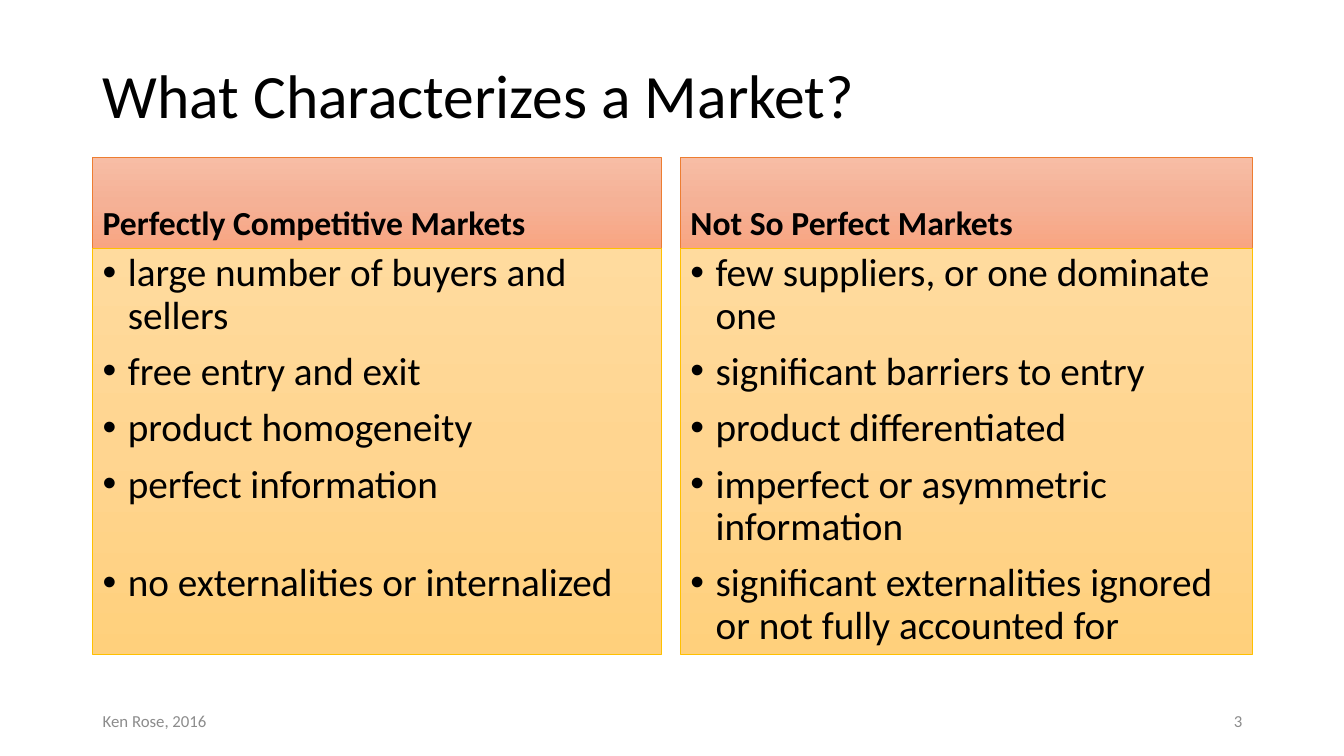
from copy import deepcopy

from pptx import Presentation
from pptx.dml.color import RGBColor
from pptx.enum.shapes import MSO_SHAPE
from pptx.enum.text import MSO_ANCHOR, PP_ALIGN
from pptx.oxml.ns import qn
from pptx.util import Inches, Pt

RECTANGLE = MSO_SHAPE.RECTANGLE
TOP, MIDDLE, BOTTOM = MSO_ANCHOR.TOP, MSO_ANCHOR.MIDDLE, MSO_ANCHOR.BOTTOM
LEFT, RIGHT = PP_ALIGN.LEFT, PP_ALIGN.RIGHT

HEADING = {"size": Pt(24), "bold": True}
BULLET = {"size": Pt(28)}
FOOTER = {"size": Pt(12)}
HEADING_COLORS = ["F7BDA5", "F5B196", "F8A582"]
LIST_COLORS = ["FFDB9E", "FFD590", "FFD07C"]


def rgb(value):
    return RGBColor.from_string(value)


def write(box, lines, font, color="000000", anchor=MIDDLE, **paragraph_format):
    """Fill a box with one paragraph per line and return the paragraphs."""
    frame = box.text_frame
    frame.word_wrap = True
    frame.vertical_anchor = anchor
    for index, line in enumerate(lines):
        para = frame.add_paragraph() if index else frame.paragraphs[0]
        for name, value in paragraph_format.items():
            setattr(para, name, value)
        span = para.add_run()
        span.text = line
        span.font.name = "Calibri"
        span.font.color.rgb = rgb(color)
        for name, value in font.items():
            setattr(span.font, name, value)
    return frame.paragraphs


deck = Presentation()
deck.slide_width, deck.slide_height = Inches(13.33), Inches(7.5)
page = deck.slides.add_slide(deck.slide_layouts[6])

# Title
title = page.shapes.add_textbox(Inches(0.92), Inches(0.25), Inches(11.5), Inches(1.45))
write(title, ["What Characterizes a Market?"], {"size": Pt(44)}, line_spacing=0.9)

# Two columns, each a heading above a bullet list
columns = [
    (0.92, 5.64, "Perfectly Competitive Markets", [
        "large number of buyers and sellers",
        "free entry and exit",
        "product homogeneity",
        "perfect information",
        "no externalities or internalized",
    ]),
    (6.75, 5.67, "Not So Perfect Markets", [
        "few suppliers, or one dominate one",
        "significant barriers to entry",
        "product differentiated",
        "imperfect or asymmetric information",
        "significant externalities ignored or not fully accounted for",
    ]),
]
bullet_lists = []
for left, width, heading, points in columns:
    panels = [
        (1.56, 0.9, [heading], HEADING, BOTTOM, HEADING_COLORS, "ED7D31"),
        (2.46, 4.03, points, BULLET, TOP, LIST_COLORS, "FFC000"),
    ]
    for top, height, lines, font, anchor, colors, border in panels:
        box = page.shapes.add_shape(
            RECTANGLE, Inches(left), Inches(top), Inches(width), Inches(height))
        box.shadow.inherit = False
        box.line.color.rgb = rgb(border)
        box.line.width = Pt(0.5)

        # Three-stop gradient running downwards
        box.fill.gradient()
        box.fill.gradient_angle = 270
        stop_list = box._element.spPr.find(".//" + qn("a:gsLst"))
        stop_list.insert(1, deepcopy(stop_list[0]))
        for stop, color, position in zip(box.fill.gradient_stops, colors, (0, 0.5, 1)):
            stop.color.rgb = rgb(color)
            stop.position = position

        paragraphs = write(box, lines, font, anchor=anchor, alignment=LEFT,
                           line_spacing=0.9, space_before=Pt(10))
    bullet_lists.append(paragraphs)

# Bullets with a hanging indent
for paragraphs in bullet_lists:
    for para in paragraphs:
        properties = para._p.get_or_add_pPr()
        properties.set("marL", str(Inches(0.25)))
        properties.set("indent", str(-Inches(0.25)))
        bullet_font = properties.makeelement(qn("a:buFont"), {"typeface": "Arial"})
        bullet_mark = properties.makeelement(qn("a:buChar"), {"char": "•"})
        properties.extend([bullet_font, bullet_mark])

# Line up the last left point with its counterpart on the right
bullet_lists[0][-1].space_before = Pt(40.3)

# Footer and page number
for left, text, alignment in [(0.92, "Ken Rose, 2016", LEFT), (9.42, "3", RIGHT)]:
    footer = page.shapes.add_textbox(Inches(left), Inches(6.95), Inches(3), Inches(0.4))
    write(footer, [text], FOOTER, "8C8C8C", alignment=alignment)

deck.save("out.pptx")
